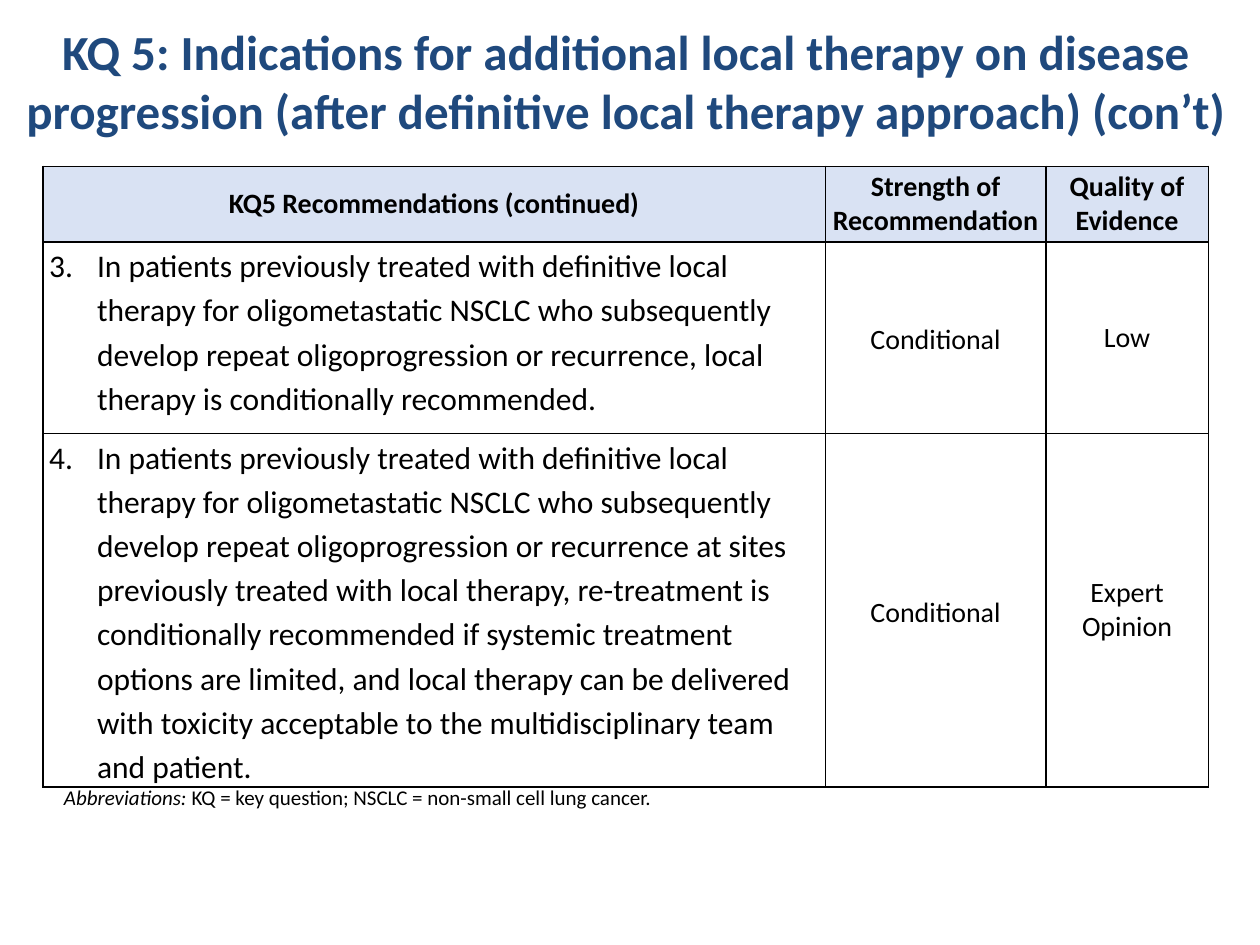
"""Build the KQ 5 recommendations slide with its table and abbreviations line."""
from dataclasses import dataclass
from typing import Optional

from lxml import etree
from pptx import Presentation
from pptx.dml.color import RGBColor
from pptx.enum.text import MSO_ANCHOR, MSO_AUTO_SIZE, PP_ALIGN
from pptx.oxml.ns import qn
from pptx.util import Inches, Pt

CENTER, LEFT = PP_ALIGN.CENTER, PP_ALIGN.LEFT
TOP, MIDDLE = MSO_ANCHOR.TOP, MSO_ANCHOR.MIDDLE
NO_FIT = MSO_AUTO_SIZE.NONE
FIT_SHAPE = MSO_AUTO_SIZE.SHAPE_TO_FIT_TEXT
TITLE_ONLY = 5
UNIT = Inches(0.1)
FONT = "Calibri"
COLORS = {"title": "1F497D", "text": "000000", "border": "000000", "header": "D9E2F3"}
COLUMNS = (62.1, 17.5, 12.9)
ROWS = (6, 15.2, 27.4)


@dataclass(frozen=True)
class Entry:
    """One table cell's text and formatting."""
    text: str
    size: int = 16
    bold: bool = False
    fill: Optional[str] = None
    spacing: Optional[float] = None
    number: Optional[int] = None


def header(text: str) -> Entry:
    """Describe a header cell."""
    return Entry(text, bold=True, fill="header")


def recommendation(number: int, text: str) -> Entry:
    """Describe a numbered recommendation cell."""
    return Entry(text, size=18, spacing=1.15, number=number)


CONDITIONAL = Entry("Conditional", spacing=1.15)
ENTRIES = (
    (header("KQ5 Recommendations (continued)"),
     header("Strength of Recommendation"),
     header("Quality of Evidence")),
    (recommendation(3, "In patients previously treated with definitive local therapy for "
                       "oligometastatic NSCLC who subsequently develop repeat oligoprogression "
                       "or recurrence, local therapy is conditionally recommended."),
     CONDITIONAL, Entry("Low")),
    (recommendation(4, "In patients previously treated with definitive local therapy for "
                       "oligometastatic NSCLC who subsequently develop repeat oligoprogression "
                       "or recurrence at sites previously treated with local therapy, "
                       "re-treatment is conditionally recommended if systemic treatment options "
                       "are limited, and local therapy can be delivered with toxicity "
                       "acceptable to the multidisciplinary team and patient."),
     CONDITIONAL, Entry("Expert Opinion")),
)


def grid(steps: float) -> int:
    """Turn grid steps into a length."""
    return round(steps * UNIT)


def place(shape, left: float, top: float, width: float, height: float) -> None:
    """Position a shape on the grid."""
    shape.left, shape.top = grid(left), grid(top)
    shape.width, shape.height = grid(width), grid(height)


def style_font(font, size: int, color: str, bold: bool = False) -> None:
    """Set the typeface, size, colour and weight."""
    font.name, font.size, font.bold = FONT, Pt(size), bold
    font.color.rgb = RGBColor.from_string(COLORS[color])


def add_borders(cell) -> None:
    """Draw a thin line on all four sides of a cell."""
    properties = cell._tc.get_or_add_tcPr()
    for side in ("a:lnL", "a:lnR", "a:lnT", "a:lnB"):
        line = etree.SubElement(properties, qn(side), w=str(Pt(1)))
        fill = etree.SubElement(line, qn("a:solidFill"))
        etree.SubElement(fill, qn("a:srgbClr"), val=COLORS["border"])


def add_number(para, number: int) -> None:
    """Give a paragraph an automatic number and a hanging indent."""
    properties = para._p.get_or_add_pPr()
    indent = Inches(0.38)
    properties.set("marL", str(indent))
    properties.set("indent", str(-indent))
    etree.SubElement(properties, qn("a:buFont"), typeface="+mj-lt")
    etree.SubElement(properties, qn("a:buAutoNum"), type="arabicPeriod", startAt=str(number))


def fill_cell(cell, entry: Entry) -> None:
    """Write and format one table cell."""
    add_borders(cell)
    if entry.fill:
        cell.fill.solid()
        cell.fill.fore_color.rgb = RGBColor.from_string(COLORS[entry.fill])
    else:
        cell.fill.background()
    cell.margin_left = cell.margin_right = Inches(0.05)
    cell.margin_top = cell.margin_bottom = 0
    numbered = entry.number is not None
    cell.vertical_anchor = TOP if numbered else MIDDLE
    cell.text = entry.text
    para = cell.text_frame.paragraphs[0]
    para.alignment = LEFT if numbered else CENTER
    if numbered:
        add_number(para, entry.number)
    if entry.spacing:
        para.line_spacing = entry.spacing
    style_font(para.font, entry.size, "text", entry.bold)


def add_title(page) -> None:
    """Fill and format the title placeholder."""
    title = page.shapes.title
    place(title, 0, 1.2, 99.3, 6.3)
    frame = title.text_frame
    frame.text = ("KQ 5: Indications for additional local therapy on disease progression "
                  "(after definitive local therapy approach) (con’t)")
    frame.word_wrap, frame.auto_size, frame.vertical_anchor = True, NO_FIT, TOP
    para = frame.paragraphs[0]
    para.alignment = CENTER
    style_font(para.font, 28, "title", bold=True)


def add_recommendations(page) -> None:
    """Add the table of recommendations."""
    table = page.shapes.add_table(len(ROWS), len(COLUMNS), grid(3.4), grid(13.2),
                                  grid(sum(COLUMNS)), grid(sum(ROWS))).table
    table.first_row = table.horz_banding = False
    for column, width in zip(table.columns, COLUMNS):
        column.width = grid(width)
    for row, height, entries in zip(table.rows, ROWS, ENTRIES):
        row.height = grid(height)
        for cell, entry in zip(row.cells, entries):
            fill_cell(cell, entry)


def add_abbreviations(page) -> None:
    """Add the abbreviations line under the table."""
    box = page.shapes.add_textbox(grid(4.1), grid(61.8), grid(78.4), grid(3))
    frame = box.text_frame
    frame.word_wrap, frame.auto_size = True, FIT_SHAPE
    para = frame.paragraphs[0]
    for text, italic in (("Abbreviations:", True),
                         (" KQ = key question; NSCLC = non-small cell lung cancer.", False)):
        span = para.add_run()
        span.text = text
        span.font.italic = italic
        style_font(span.font, 12, "text")


def main() -> None:
    """Build and save the deck."""
    deck = Presentation()
    deck.slide_width, deck.slide_height = Inches(10), Inches(7.5)
    page = deck.slides.add_slide(deck.slide_layouts[TITLE_ONLY])
    add_title(page)
    add_recommendations(page)
    add_abbreviations(page)
    deck.save("out.pptx")


if __name__ == "__main__":
    main()
